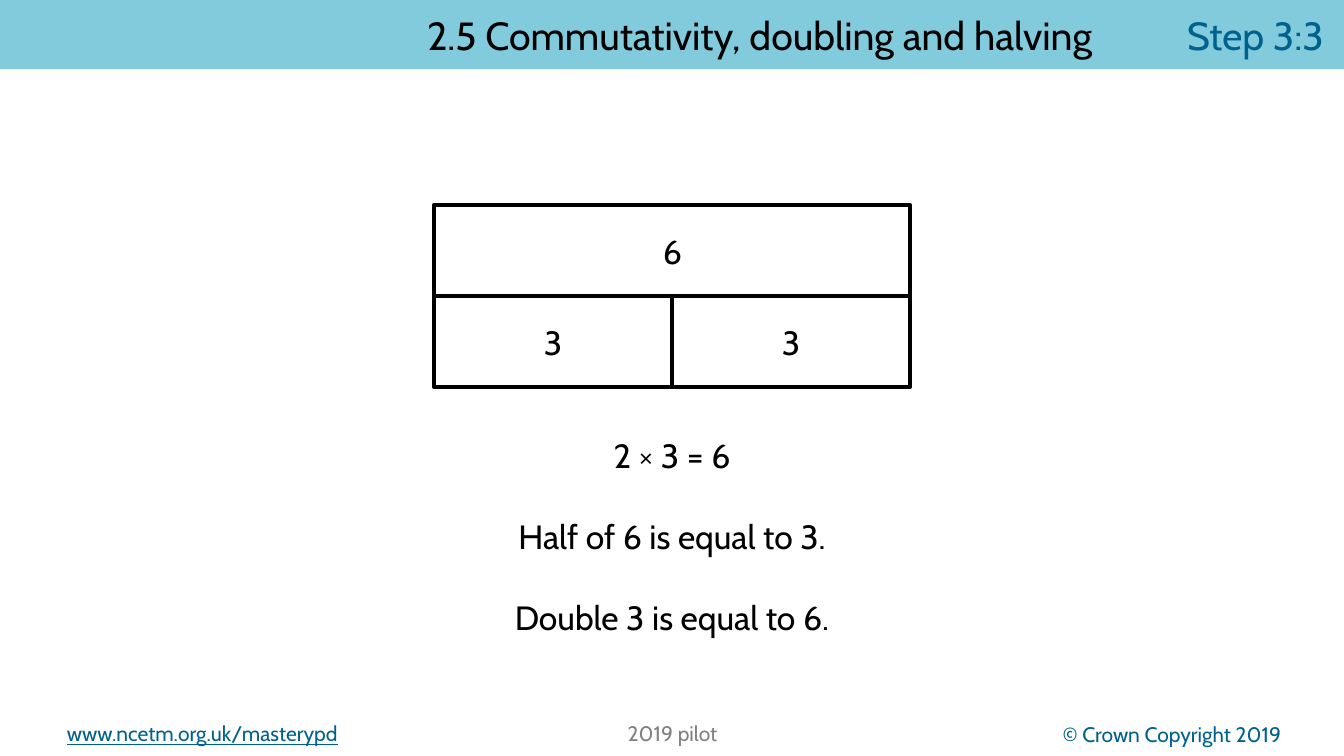
from pptx import Presentation
from pptx.dml.color import RGBColor
from pptx.enum.shapes import MSO_CONNECTOR, MSO_SHAPE
from pptx.enum.text import MSO_ANCHOR, MSO_AUTO_SIZE, PP_ALIGN
from pptx.oxml.ns import qn
from pptx.util import Pt
from lxml import etree

LEFT, CENTER, RIGHT = PP_ALIGN.LEFT, PP_ALIGN.CENTER, PP_ALIGN.RIGHT
MIDDLE = MSO_ANCHOR.MIDDLE
TITLE_ONLY = 5
FONT = "Cabin"
COLORS = {"band": "82CBDD", "ink": "000000", "accent": "00628C", "pilot": "808080"}

HEADING = "2.5 Commutativity, doubling and halving"
STEP = "Step 3:3"
WHOLE = "6"
PARTS = ["3", "3"]
SENTENCES = [  # text, box width
    ("2 × 3 = 6", 159),
    ("Half of 6 is equal to 3.", 348),
    ("Double 3 is equal to 6.", 357),
]
FOOTERS = [  # text, left, top, alignment, colour, underlined
    ("© Crown Copyright 2019", 878, 717, RIGHT, "accent", False),
    ("www.ncetm.org.uk/masterypd", 57, 716, LEFT, "accent", True),
    ("2019 pilot", 466, 716, CENTER, "pilot", False),
]

SLIDE_WIDTH, SLIDE_HEIGHT = 1344, 756
BAND_HEIGHT = 69
HEADING_LEFT, STEP_LEFT = 427, 1187
BAR_LEFT, BAR_TOP, BAR_WIDTH, ROW_HEIGHT = 434, 205, 476, 91
NUMBER_WIDTH, TEXT_HEIGHT = 38, 50
SENTENCES_TOP, SENTENCE_STEP = 430, 81
FOOTER_WIDTH, FOOTER_HEIGHT = 413, 35


def px(length):
    return round(length * 9144000 / 1008)


def color(name):
    return RGBColor.from_string(COLORS[name])


def add_run(paragraph, text, size, color_name="ink", underline=None):
    run = paragraph.add_run()
    run.text = text
    run.font.name = FONT
    run.font.size = Pt(size)
    run.font.color.rgb = color(color_name)
    run.font.underline = underline


def add_text(slide, text, left, top, width, height, size=24,
             alignment=CENTER, color_name="ink", underline=None):
    box = slide.shapes.add_textbox(px(left), px(top), px(width), px(height))
    box.text_frame.word_wrap = size < 24
    paragraph = box.text_frame.paragraphs[0]
    paragraph.alignment = alignment
    add_run(paragraph, text, size, color_name, underline)


def add_divider(slide, x1, y1, x2, y2):
    line = slide.shapes.add_connector(
        MSO_CONNECTOR.STRAIGHT, px(x1), px(y1), px(x2), px(y2))
    line.line.color.rgb = color("ink")
    line.line.width = Pt(3)
    etree.SubElement(line._element.spPr, qn("a:effectLst"))
    return line


def add_header(slide):
    band = slide.shapes.title
    band.left, band.top = 0, 0
    band.width, band.height = px(SLIDE_WIDTH), px(BAND_HEIGHT)
    band.fill.solid()
    band.fill.fore_color.rgb = color("band")
    frame = band.text_frame
    frame.auto_size = MSO_AUTO_SIZE.NONE
    frame.vertical_anchor = MIDDLE
    frame.margin_left, frame.margin_right = px(HEADING_LEFT), 0
    paragraph = frame.paragraphs[0]
    paragraph.alignment = LEFT
    tabs = etree.SubElement(paragraph._p.get_or_add_pPr(), qn("a:tabLst"))
    etree.SubElement(tabs, qn("a:tab"), pos=str(px(STEP_LEFT - HEADING_LEFT)), algn="l")
    add_run(paragraph, HEADING + "\t", 28)
    add_run(paragraph, STEP, 28, "accent")


def add_bar_model(slide):
    bar = slide.shapes.add_shape(
        MSO_SHAPE.RECTANGLE, px(BAR_LEFT), px(BAR_TOP), px(BAR_WIDTH), px(2 * ROW_HEIGHT))
    bar.shadow.inherit = False
    bar.fill.background()
    bar.line.color.rgb = color("ink")
    bar.line.width = Pt(3)

    right, middle = BAR_LEFT + BAR_WIDTH, BAR_TOP + ROW_HEIGHT
    row_line = add_divider(slide, BAR_LEFT, middle, right, middle)
    row_line.begin_connect(bar, 1)
    row_line.end_connect(bar, 3)
    part_width = BAR_WIDTH // len(PARTS)
    split = BAR_LEFT + part_width
    part_line = add_divider(slide, split, middle, split, middle + ROW_HEIGHT)
    part_line.end_connect(bar, 2)

    for row, numbers in enumerate([[WHOLE], PARTS]):
        cell_width = BAR_WIDTH / len(numbers)
        top = BAR_TOP + row * ROW_HEIGHT + (ROW_HEIGHT - TEXT_HEIGHT) / 2
        for column, number in enumerate(numbers):
            left = BAR_LEFT + column * cell_width + (cell_width - NUMBER_WIDTH) / 2
            add_text(slide, number, left, top, NUMBER_WIDTH, TEXT_HEIGHT)


def main():
    presentation = Presentation()
    presentation.slide_width = px(SLIDE_WIDTH)
    presentation.slide_height = px(SLIDE_HEIGHT)
    slide = presentation.slides.add_slide(presentation.slide_layouts[TITLE_ONLY])

    for text, left, top, alignment, color_name, underline in FOOTERS:
        add_text(slide, text, left, top, FOOTER_WIDTH, FOOTER_HEIGHT, 15,
                 alignment, color_name, underline)
    add_header(slide)
    add_bar_model(slide)
    for index, (text, width) in enumerate(SENTENCES):
        add_text(slide, text, (SLIDE_WIDTH - width) / 2,
                 SENTENCES_TOP + index * SENTENCE_STEP, width, TEXT_HEIGHT)

    presentation.save("out.pptx")


if __name__ == "__main__":
    main()
